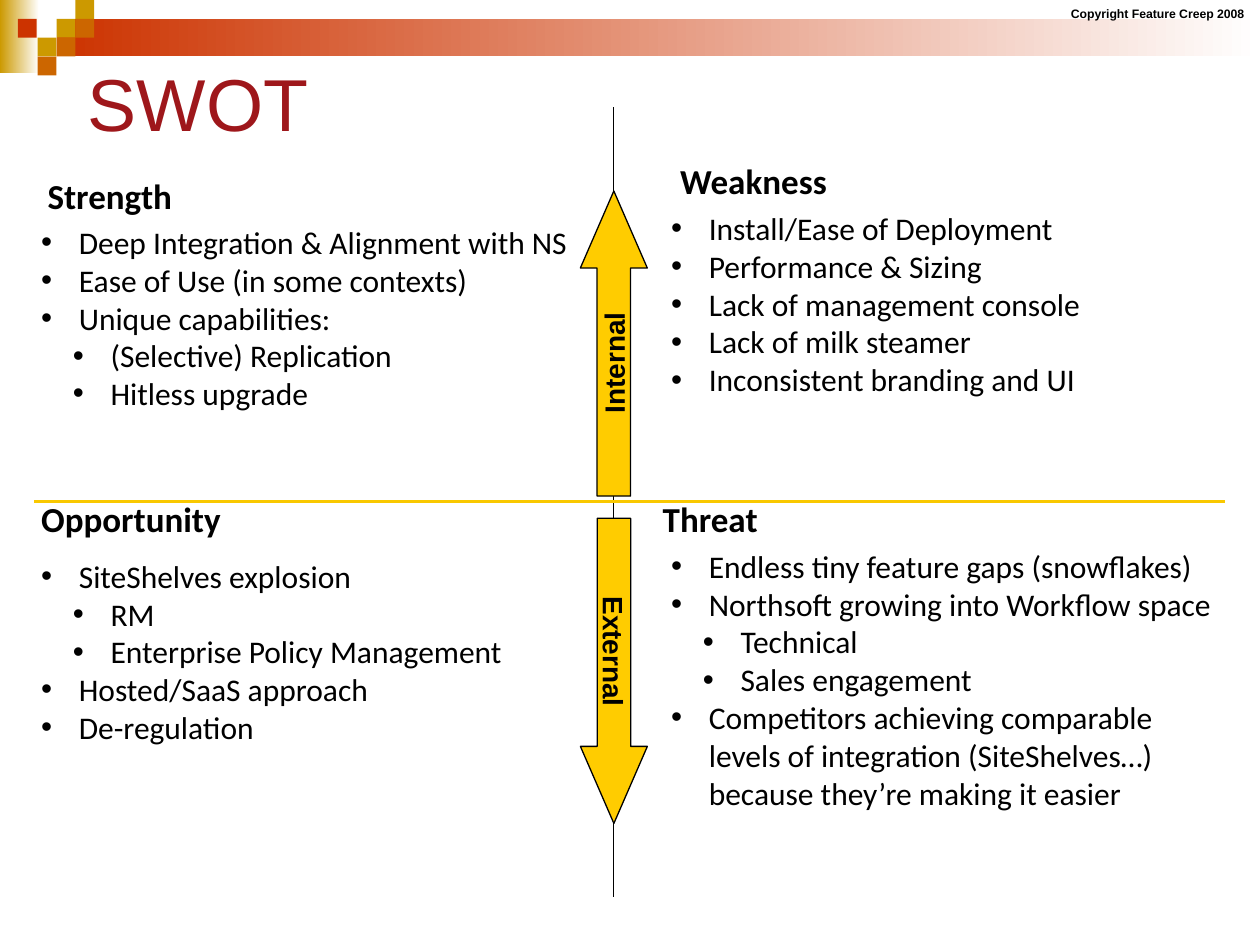
from lxml import etree
from pptx import Presentation
from pptx.dml.color import RGBColor
from pptx.enum import shapes, text
from pptx.oxml import ns
from pptx.util import Cm, Pt

BLACK = RGBColor(0x00, 0x00, 0x00)
WHITE = RGBColor(0xFF, 0xFF, 0xFF)
TITLE_RED = RGBColor(0x9E, 0x17, 0x1B)
GOLD = RGBColor(0xCC, 0x99, 0x00)
ORANGE = RGBColor(0xCC, 0x66, 0x00)
RED = RGBColor(0xCC, 0x33, 0x00)
RULE_YELLOW = RGBColor(0xF9, 0xC8, 0x00)
ARROW_YELLOW = RGBColor(0xFF, 0xCC, 0x00)

TILE = 0.38  # side of a header tile, in cm
HANG = 0.76  # gap between bullet and text, in cm
LEVEL_STEP = 0.64  # extra indent of a sub-point, in cm

# Header tiles: left, top, colour
TILES = [
    (3 * TILE, TILE, GOLD),
    (4 * TILE, 0, GOLD),
    (4 * TILE, TILE, ORANGE),
    (2 * TILE, 2 * TILE, GOLD),
    (0.36, TILE, RED),
    (3 * TILE, 2 * TILE, ORANGE),
    (2 * TILE, 3 * TILE, ORANGE),
]

# Quadrants: heading, heading left and top, list box, points as (level, text)
QUADRANTS = [
    ("Strength", 0.71, 3.4, (0.58, 4.37, 11.84, 4.88), [
        (0, "Deep Integration & Alignment with NS"),
        (0, "Ease of Use (in some contexts)"),
        (0, "Unique capabilities:"),
        (1, "(Selective) Replication"),
        (1, "Hitless upgrade"),
    ]),
    ("Weakness", 13.46, 3.1, (13.28, 4.09, 11.86, 4.11), [
        (0, "Install/Ease of Deployment"),
        (0, "Performance & Sizing"),
        (0, "Lack of management console"),
        (0, "Lack of milk steamer"),
        (0, "Inconsistent branding and UI"),
    ]),
    ("Opportunity", 0.58, 9.91, (0.58, 11.1, 12.12, 4.11), [
        (0, "SiteShelves explosion"),
        (1, "RM"),
        (1, "Enterprise Policy Management"),
        (0, "Hosted/SaaS approach"),
        (0, "De-regulation"),
    ]),
    ("Threat", 13.11, 9.91, (13.28, 10.9, 11.51, 5.59), [
        (0, "Endless tiny feature gaps (snowflakes)"),
        (0, "Northsoft growing into Workflow space"),
        (1, "Technical"),
        (1, "Sales engagement"),
        (0, "Competitors achieving comparable levels of integration "
            "(SiteShelves…) because they’re making it easier"),
    ]),
]


def style(paragraph, size, name, color=BLACK, bold=False):
    font = paragraph.font
    font.size, font.name, font.bold = Pt(size), name, bold
    font.color.rgb = color


def add_bar(slide, left, top, width, height, color, fade=False):
    shape = slide.shapes.add_shape(
        shapes.MSO_SHAPE.RECTANGLE, Cm(left), Cm(top), Cm(width), Cm(height))
    shape.shadow.inherit = False
    shape.line.fill.background()
    if fade:
        shape.fill.gradient()
        shape.fill.gradient_angle = 0
        for stop, stop_color in zip(shape.fill.gradient_stops, (color, WHITE)):
            stop.color.rgb = stop_color
    else:
        shape.fill.solid()
        shape.fill.fore_color.rgb = color


def add_text_box(slide, left, top, width, height, wrap=True):
    box = slide.shapes.add_textbox(Cm(left), Cm(top), Cm(width), Cm(height))
    box.text_frame.word_wrap = wrap
    return box.text_frame


def add_label(slide, box, words, size, name, color=BLACK, bold=True, wrap=True):
    frame = add_text_box(slide, *box, wrap=wrap)
    frame.text = words
    style(frame.paragraphs[0], size, name, color, bold)
    return frame


def add_bullet(paragraph, level):
    properties = paragraph._p.get_or_add_pPr()
    properties.set("marL", str(Cm(HANG + level * LEVEL_STEP)))
    properties.set("indent", str(-Cm(HANG)))
    etree.SubElement(properties, ns.qn("a:buFont"), typeface="Arial")
    etree.SubElement(properties, ns.qn("a:buChar"), char="•")


def add_points(slide, box, points):
    frame = add_text_box(slide, *box)
    for index, (level, words) in enumerate(points):
        paragraph = frame.add_paragraph() if index else frame.paragraphs[0]
        paragraph.text = words
        paragraph.level = level
        add_bullet(paragraph, level)
        style(paragraph, 18, "Calibri")


def add_axis(slide, start, end, color, width):
    line = slide.shapes.add_connector(
        shapes.MSO_CONNECTOR.STRAIGHT, *map(Cm, start + end))
    line.line.color.rgb = color
    line.line.width = Pt(width)
    etree.SubElement(line._element.spPr, ns.qn("a:effectLst"))


def add_arrow(slide, top, rotation, words):
    arrow = slide.shapes.add_shape(
        shapes.MSO_SHAPE.RIGHT_ARROW, Cm(9.3), Cm(top), Cm(6.15), Cm(1.35))
    arrow.rotation = rotation
    arrow.adjustments[0], arrow.adjustments[1] = 0.5, 1.15
    arrow.shadow.inherit = False
    arrow.fill.solid()
    arrow.fill.fore_color.rgb = ARROW_YELLOW
    arrow.line.color.rgb = BLACK
    arrow.line.width = Pt(0.75)
    frame = arrow.text_frame
    frame.text = words
    frame.word_wrap = False
    frame.vertical_anchor = text.MSO_ANCHOR.MIDDLE
    frame.paragraphs[0].alignment = text.PP_ALIGN.CENTER
    style(frame.paragraphs[0], 16, "Arial", bold=True)


def main():
    presentation = Presentation()
    presentation.slide_width, presentation.slide_height = Cm(25.4), Cm(19.05)
    slide = presentation.slides.add_slide(presentation.slide_layouts[6])

    # Header band and tiles
    add_bar(slide, 0, 0, 0.79, 1.47, GOLD, fade=True)
    add_bar(slide, 3 * TILE, TILE, 25.4 - 3 * TILE, 2 * TILE, RED, fade=True)
    for left, top, color in TILES:
        add_bar(slide, left, top, TILE, TILE, color)
    add_label(slide, (21.34, 0, 4.06, 0.56), "Copyright Feature Creep 2008",
              7, "Arial", wrap=False)

    # Title
    title = add_label(slide, (1.52, 0.86, 22.86, 2.39), "SWOT", 42, "Arial",
                      TITLE_RED, bold=False)
    title.vertical_anchor = text.MSO_ANCHOR.MIDDLE

    # Axes between the quadrants
    add_axis(slide, (12.37, 2.16), (12.37, 18.08), BLACK, 0.75)
    add_axis(slide, (0.69, 10.11), (24.69, 10.11), RULE_YELLOW, 1.25)

    # Quadrants
    for heading, left, top, box, points in QUADRANTS:
        add_label(slide, (left, top, 7.14, 1.1), heading, 20, "Calibri")
        add_points(slide, box, points)

    # Arrows along the vertical axis
    add_arrow(slide, 6.25, 270, "Internal")
    add_arrow(slide, 12.85, 90, "External")

    presentation.save("out.pptx")


if __name__ == "__main__":
    main()
